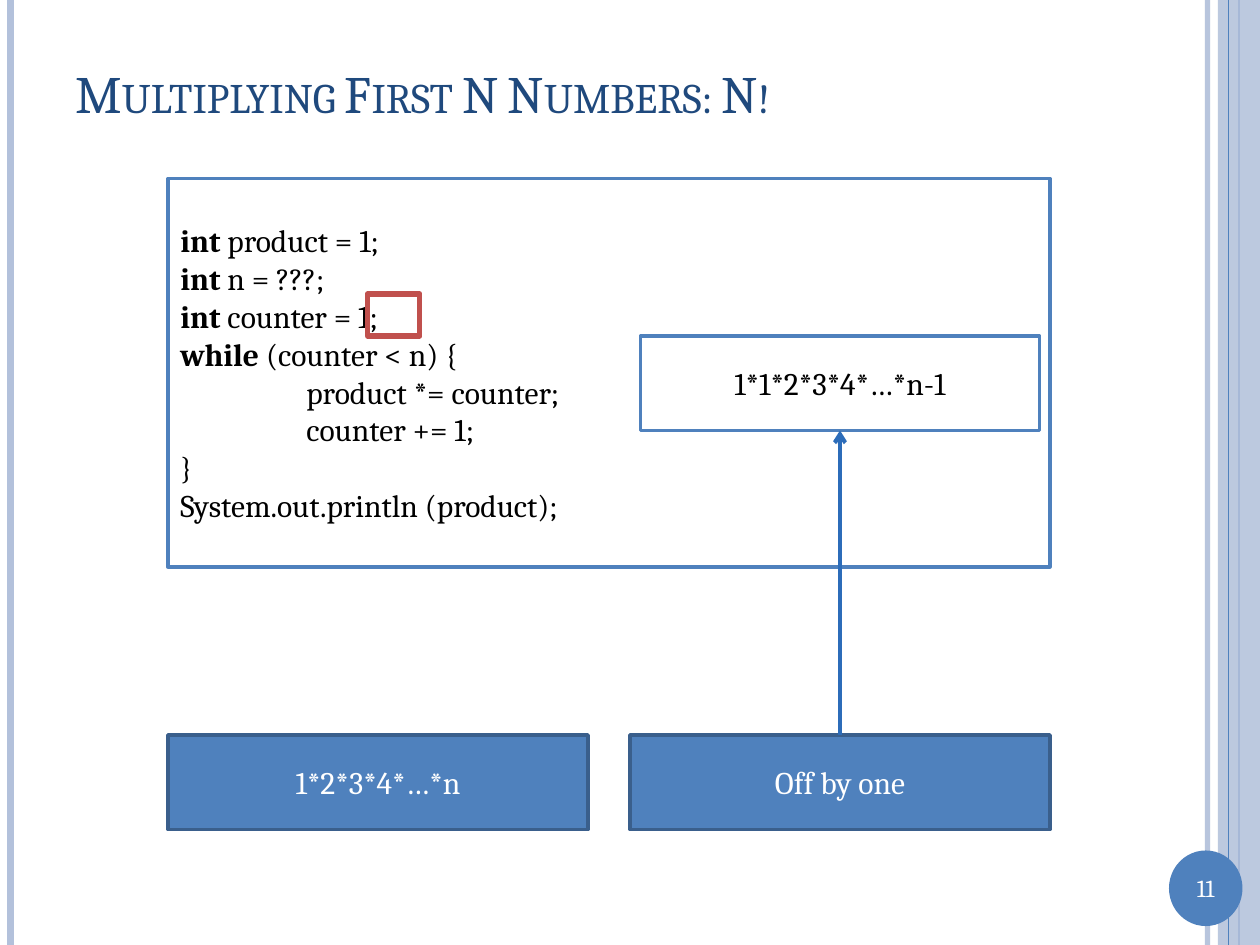
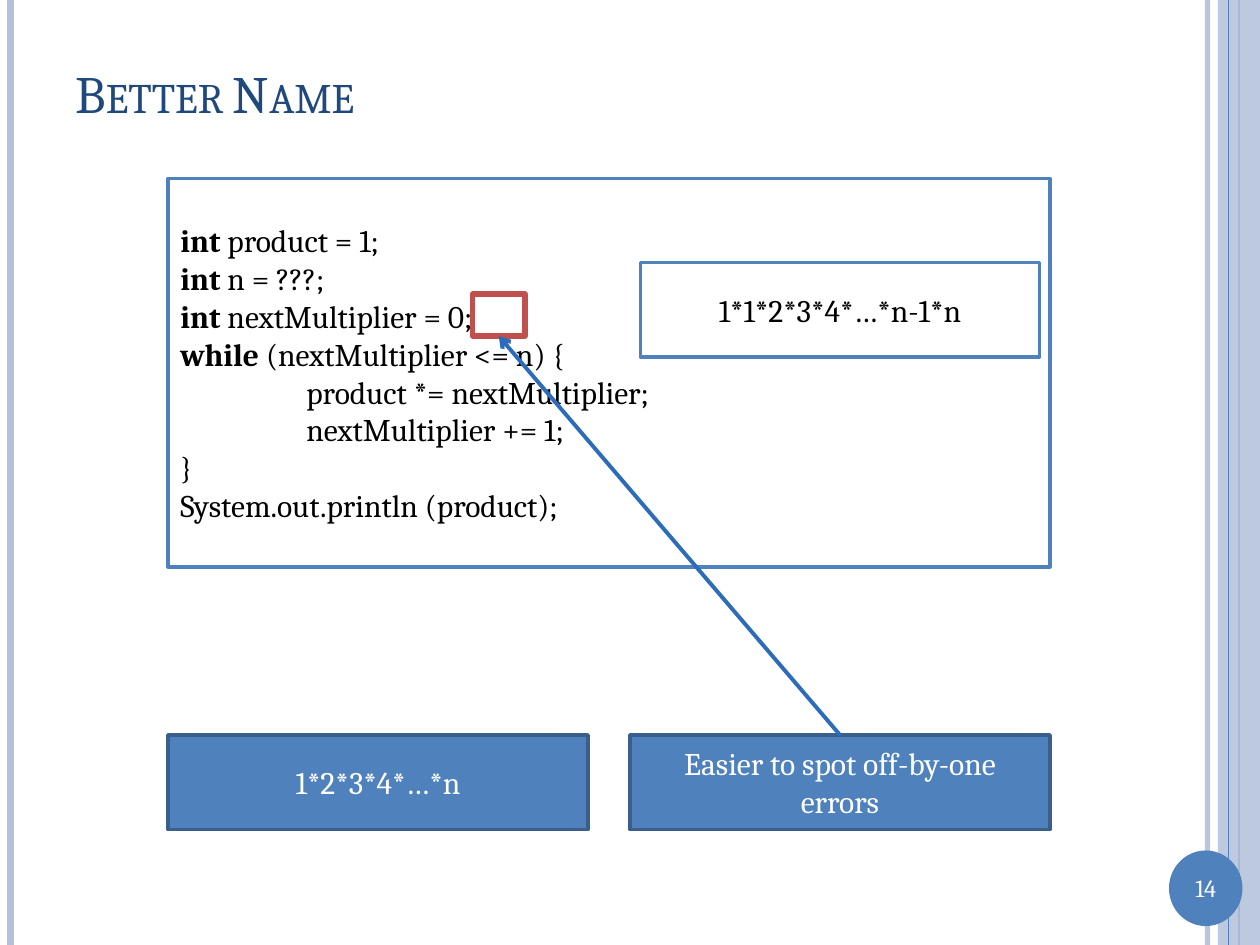
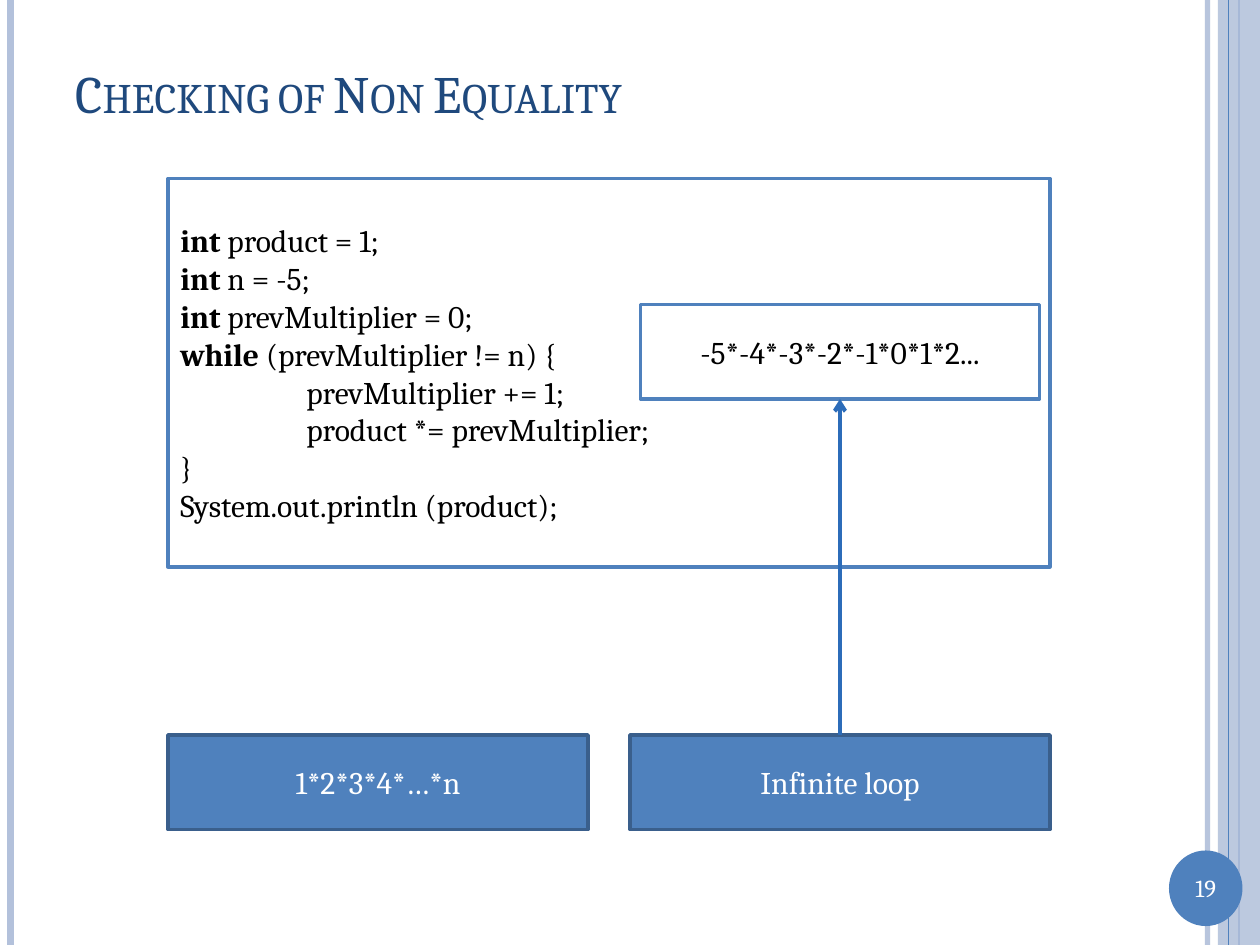
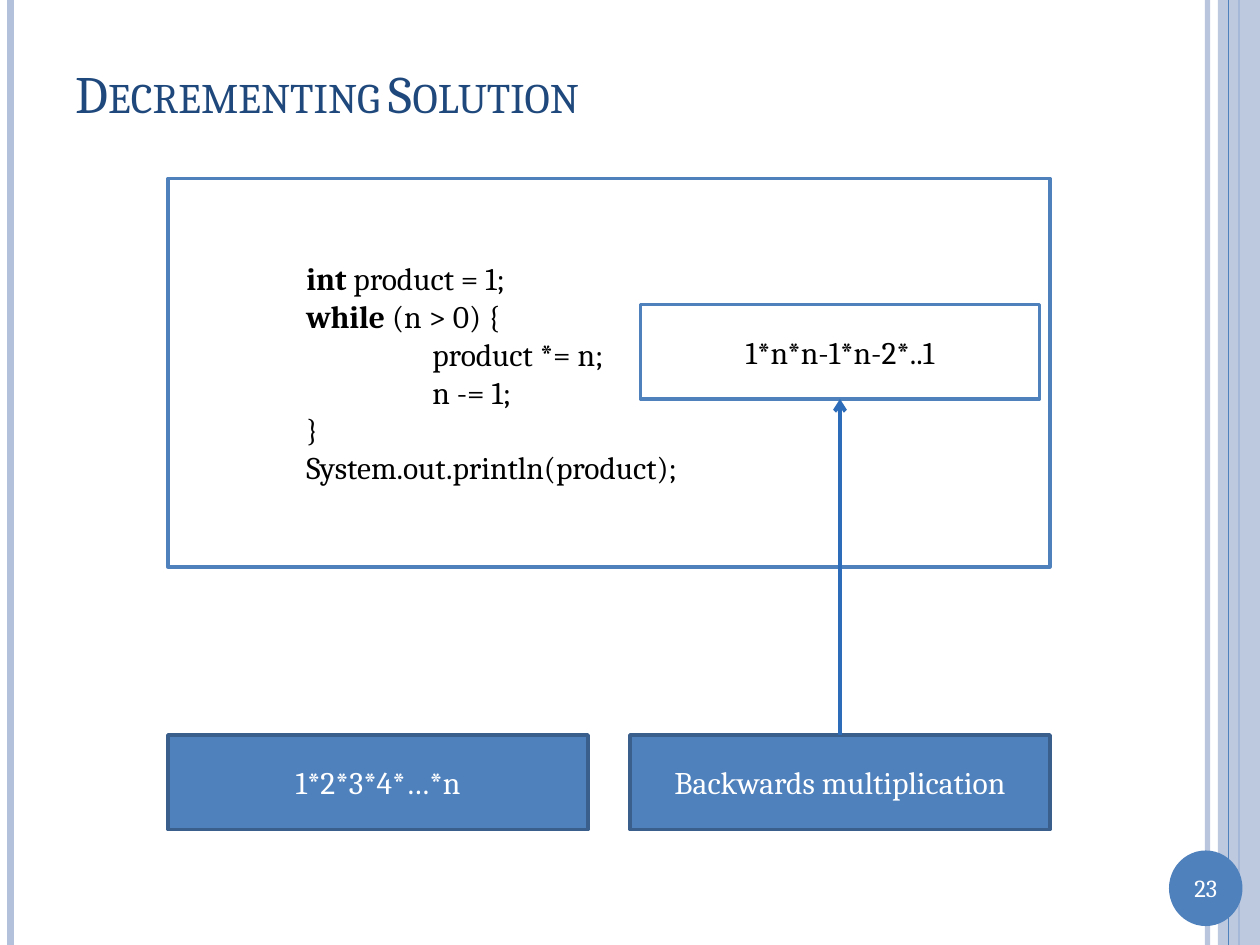
from dataclasses import dataclass
from typing import Optional

from pptx import Presentation
from pptx.dml.color import RGBColor
from pptx.enum.shapes import MSO_CONNECTOR as Line, MSO_SHAPE as Preset
from pptx.enum.text import MSO_ANCHOR as Anchor, PP_ALIGN as Align
from pptx.oxml.ns import qn
from pptx.util import Pt

# Shared style
WIDTH, HEIGHT = 720, 540
FONT = "Cambria"
COLORS = {
    "white": "FFFFFF",
    "black": "000000",
    "title": "1F497D",
    "blue": "4F81BD",
    "edge": "3A5F8C",
    "band": "B3C1DB",
    "arrow": "2C6CB9",
    "mark": "C0504D",
}
KEYWORDS = ("int", "while")
TAB = 72


@dataclass(frozen=True)
class Area:
    left: float
    top: float
    width: float
    height: float

    @property
    def center(self) -> float:
        return self.left + self.width / 2

    @property
    def bottom(self) -> float:
        return self.top + self.height

    def lengths(self) -> tuple:
        return Pt(self.left), Pt(self.top), Pt(self.width), Pt(self.height)


@dataclass(frozen=True)
class Look:
    fill: Optional[str]
    line: Optional[str] = None
    weight: float = 2
    text: str = "white"
    opacity: int = 100


@dataclass(frozen=True)
class Rule:
    x: float
    color: str
    weight: float
    opacity: int = 100


@dataclass(frozen=True)
class Example:
    number: int
    title: str
    code: tuple  # (indent level, text) for each line
    result: str
    result_top: float
    remark: str
    mark_left: Optional[float] = None
    arrow_to_mark: bool = False


# Areas and looks
TITLE = Area(36, 21.6, 624, 62.6)
CODE = Area(96, 102, 504, 222)
GOAL = Area(96, 420, 240, 54)
REMARK = Area(360, 420, 240, 54)
BAND = Area(696, 0, 24, HEIGHT)
BADGE = Area(668, 486, 42, 43.2)
NUMBER = Area(668, 495.4, 42, 24.5)

PANEL = Look("white", "blue", text="black")
ANSWER = Look("blue", "edge")
MARK = Look(None, "mark", 3)
RULES_BEHIND = (
    Rule(690, "band", 3, 93),
    Rule(6, "band", 4.5),
    Rule(708, "blue", 1.5),
)
RULE_ON_BAND = Rule(702, "blue", 0.75)


def rgb(name: str) -> RGBColor:
    return RGBColor.from_string(COLORS[name])


def set_opacity(shape, percent: int) -> None:
    if percent < 100:
        color = shape._element.spPr.find(".//" + qn("a:srgbClr"))
        alpha = color.makeelement(qn("a:alpha"), {"val": str(percent * 1000)})
        color.append(alpha)


def write(para, text: str, size: float, color: str, align=Align.LEFT):
    """Fill a paragraph and return its last span."""
    para.alignment = align
    para.font.name = FONT
    para.font.size = Pt(size)
    para.font.color.rgb = rgb(color)
    span = para.add_run()
    span.text = text
    return span


def add_box(page, area: Area, look: Look, text: str = "", preset=Preset.RECTANGLE):
    box = page.shapes.add_shape(preset, *area.lengths())
    box.shadow.inherit = False
    if look.fill:
        box.fill.solid()
        box.fill.fore_color.rgb = rgb(look.fill)
        set_opacity(box, look.opacity)
    else:
        box.fill.background()
    if look.line:
        box.line.color.rgb = rgb(look.line)
        box.line.width = Pt(look.weight)
    else:
        box.line.fill.background()
    box.text_frame.vertical_anchor = Anchor.MIDDLE
    if text:
        write(box.text_frame.paragraphs[0], text, 18, look.text, Align.CENTER)
    return box


def add_label(page, area: Area, text: str, size: float, color: str,
              align=Align.LEFT, anchor=Anchor.TOP):
    frame = page.shapes.add_textbox(*area.lengths()).text_frame
    frame.word_wrap = True
    frame.vertical_anchor = anchor
    return write(frame.paragraphs[0], text, size, color, align)


def add_line(page, start: tuple, end: tuple, color: str, weight: float,
             opacity: int = 100, arrow: bool = False) -> None:
    points = [Pt(value) for value in (*start, *end)]
    line = page.shapes.add_connector(Line.STRAIGHT, *points)
    line.line.color.rgb = rgb(color)
    line.line.width = Pt(weight)
    set_opacity(line, opacity)
    properties = line._element.spPr
    if arrow:
        outline = properties.find(qn("a:ln"))
        outline.append(outline.makeelement(qn("a:tailEnd"), {"type": "arrow"}))
    properties.append(properties.makeelement(qn("a:effectLst"), {}))


def add_rule(page, rule: Rule) -> None:
    add_line(page, (rule.x, 0), (rule.x, HEIGHT), rule.color, rule.weight, rule.opacity)


def add_frame(page, number: int, title: str) -> None:
    """Draw the side rules, the number badge and the title."""
    for rule in RULES_BEHIND:
        add_rule(page, rule)
    add_box(page, BAND, Look("band", opacity=87))
    add_rule(page, RULE_ON_BAND)
    add_box(page, BADGE, Look("blue"), preset=Preset.OVAL)
    add_label(page, NUMBER, str(number), 14, "white", Align.CENTER)
    span = add_label(page, TITLE, title, 30, "title", anchor=Anchor.MIDDLE)
    span._r.get_or_add_rPr().set("cap", "small")


def add_code(page, lines: tuple) -> None:
    frame = add_box(page, CODE, PANEL).text_frame
    for index, (level, text) in enumerate(lines):
        para = frame.paragraphs[0] if index == 0 else frame.add_paragraph()
        para._p.get_or_add_pPr().set("marL", str(Pt(level * TAB)))
        keyword, space, rest = text.partition(" ")
        if keyword in KEYWORDS:
            write(para, keyword, 18, PANEL.text).font.bold = True
            para.add_run().text = space + rest
        else:
            write(para, text, 18, PANEL.text)


def add_example(deck, example: Example) -> None:
    page = deck.slides.add_slide(deck.slide_layouts[6])
    add_frame(page, example.number, example.title)
    add_code(page, example.code)
    add_box(page, GOAL, ANSWER, "1*2*3*4*…*n")
    add_box(page, REMARK, ANSWER, example.remark)
    result = Area(366, example.result_top, 228, 54)
    add_box(page, result, PANEL, example.result)
    target = result
    if example.mark_left is not None:
        mark = Area(example.mark_left, 168, 30, 24)
        add_box(page, mark, MARK)
        if example.arrow_to_mark:
            target = mark
    add_line(page, (REMARK.center, REMARK.top), (target.center, target.bottom),
             "arrow", 2.25, arrow=True)


def loop_code(n: str, counter: str, start: int, test: str, body: tuple) -> tuple:
    """Lines of the program that multiplies with a counter."""
    return (
        (0, "int product = 1;"),
        (0, f"int n = {n};"),
        (0, f"int {counter} = {start};"),
        (0, f"while ({counter} {test} n) {{"),
        *((1, line) for line in body),
        (0, "}"),
        (0, "System.out.println (product);"),
    )


# Content
EXAMPLES = (
    Example(
        11, "Multiplying First N Numbers: N!",
        loop_code("???", "counter", 1, "<",
                  ("product *= counter;", "counter += 1;")),
        "1*1*2*3*4*…*n-1", 192, "Off by one", mark_left=210,
    ),
    Example(
        14, "Better Name",
        loop_code("???", "nextMultiplier", 0, "<=",
                  ("product *= nextMultiplier;", "nextMultiplier += 1;")),
        "1*1*2*3*4*…*n-1*n", 150, "Easier to spot off-by-one errors",
        mark_left=270, arrow_to_mark=True,
    ),
    Example(
        19, "Checking of Non Equality",
        loop_code("-5", "prevMultiplier", 0, "!=",
                  ("prevMultiplier += 1;", "product *= prevMultiplier;")),
        "-5*-4*-3*-2*-1*0*1*2...", 174, "Infinite loop",
    ),
    Example(
        23, "Decrementing Solution",
        (
            (1, "int product = 1;"),
            (1, "while (n > 0) {"),
            (2, "product *= n;"),
            (2, "n -= 1;"),
            (1, "}"),
            (1, "System.out.println(product);"),
        ),
        "1*n*n-1*n-2*..1", 174, "Backwards multiplication",
    ),
)


def main() -> None:
    deck = Presentation()
    deck.slide_width, deck.slide_height = Pt(WIDTH), Pt(HEIGHT)
    for example in EXAMPLES:
        add_example(deck, example)
    deck.save("out.pptx")


if __name__ == "__main__":
    main()
